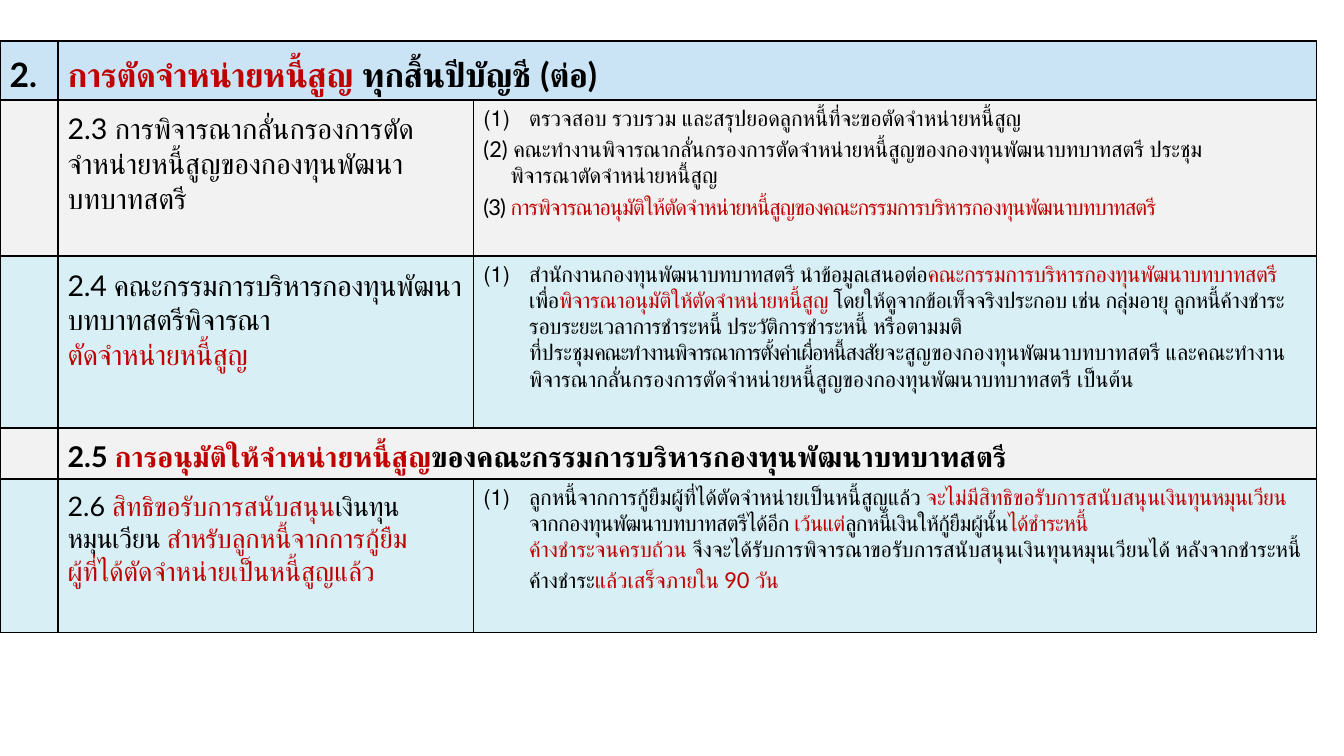
from lxml import etree
from pptx import Presentation
from pptx.dml.color import RGBColor
from pptx.oxml.ns import qn
from pptx.util import Pt

FONT = "Lato"
COLORS = {
    "black": "000000",
    "red": "C00000",
    "header": "CAE4F6",
    "grey": "F2F2F2",
    "blue": "D7EFF5",
}
COLUMN_WIDTHS = [34.5, 247.5, 501.5]
ROW_HEIGHTS = [35, 93, 102.3, 30.3, 91.6]
ROW_FILLS = ["header", "grey", "blue", "grey", "blue"]
TAB_STOPS = [14.4, 35.3, 77.8]
NUMBER_INDENT = 27.2
HANGING_INDENT = 16.2


def black(text, spacing=0):
    return text, "black", spacing


def red(text, spacing=0):
    return text, "red", spacing


def set_indent(paragraph, indent, numbered):
    properties = paragraph._p.get_or_add_pPr()
    properties.set("marL", str(Pt(indent)))
    properties.set("indent", str(-Pt(indent)))
    if numbered:
        etree.SubElement(properties, qn("a:buFont"), typeface="Arial")
        etree.SubElement(properties, qn("a:buAutoNum"), type="arabicParenBoth")
    else:
        etree.SubElement(properties, qn("a:buNone"))
    tabs = etree.SubElement(properties, qn("a:tabLst"))
    for stop in TAB_STOPS:
        etree.SubElement(tabs, qn("a:tab"), pos=str(Pt(stop)), algn="l")


def write_paragraph(paragraph, runs, size, bold=False, indent=0, numbered=False):
    paragraph.line_spacing = 1.2
    if indent:
        set_indent(paragraph, indent, numbered)
    paragraph.font.name = FONT
    paragraph.font.size = Pt(size)
    paragraph.font.bold = bold
    for text, color, spacing in runs:
        for position, line in enumerate(text.split("\n")):
            if position:
                paragraph.add_line_break()
            if not line:
                continue
            run = paragraph.add_run()
            run.text = line
            run.font.color.rgb = RGBColor.from_string(COLORS[color])
            if spacing:
                run._r.get_or_add_rPr().set("spc", str(round(spacing * 100)))


def write_cell(cell, runs, size, **options):
    write_paragraph(cell.text_frame.paragraphs[0], runs, size, **options)


def write_numbered(cell, runs):
    write_cell(cell, runs, 13, indent=NUMBER_INDENT, numbered=True)


def style_cell(cell, fill):
    cell.margin_left = cell.margin_right = Pt(5.8)
    cell.margin_top = cell.margin_bottom = Pt(2.9)
    properties = cell._tc.get_or_add_tcPr()
    for side in ("lnL", "lnR", "lnT", "lnB"):
        line = etree.SubElement(properties, qn(f"a:{side}"), w=str(Pt(1)))
        solid = etree.SubElement(line, qn("a:solidFill"))
        etree.SubElement(solid, qn("a:srgbClr"), val=COLORS["black"])
    cell.fill.solid()
    cell.fill.fore_color.rgb = RGBColor.from_string(COLORS[fill])


def add_grid(slide):
    frame = slide.shapes.add_table(
        len(ROW_HEIGHTS), len(COLUMN_WIDTHS), Pt(0), Pt(24.5),
        Pt(sum(COLUMN_WIDTHS)), Pt(sum(ROW_HEIGHTS)))
    table = frame.table
    table.first_row = False
    table.horz_banding = False
    for column, width in zip(table.columns, COLUMN_WIDTHS):
        column.width = Pt(width)
    for row, height, fill in zip(table.rows, ROW_HEIGHTS, ROW_FILLS):
        row.height = Pt(height)
        for cell in row.cells:
            style_cell(cell, fill)
    for row in (0, 3):
        table.cell(row, 1).merge(table.cell(row, 2))
    return table


def fill_headings(table):
    write_cell(table.cell(0, 0), [black("2.")], 20, bold=True)
    write_cell(table.cell(0, 1), [
        red("การตัดจำหน่ายหนี้สูญ ", -0.3),
        black("ทุกสิ้นปีบัญชี (ต่อ)", -0.3),
    ], 20, bold=True)
    write_cell(table.cell(3, 1), [
        black("2.5"),
        red(" การอนุมัติให้จำหน่ายหนี้สูญ"),
        black("ของคณะกรรมการบริหารกองทุนพัฒนาบทบาทสตรี"),
    ], 17, bold=True)


def fill_topics(table):
    write_cell(table.cell(1, 1), [
        black("2.3 การพิจารณากลั่นกรองการตัดจำหน่ายหนี้สูญของกองทุนพัฒนาบทบาทสตรี"),
    ], 17)
    write_cell(table.cell(2, 1), [
        black("2.4 คณะกรรมการบริหารกองทุนพัฒนาบทบาทสตรีพิจารณา\n", -0.2),
        red("ตัดจำหน่ายหนี้สูญ", -0.2),
    ], 17)
    write_cell(table.cell(4, 1), [
        black("2.6 "),
        red("สิทธิขอรับการสนับสนุน"),
        black("เงินทุน\nหมุนเวียน ", -0.3),
        red("สำหรับ", -0.3),
        red("ลูกหนี้จากการกู้ยืม\nผู้ที่ได้ตัดจำหน่ายเป็นหนี้สูญแล้ว"),
    ], 16)


def fill_details(table):
    screening = table.cell(1, 2)
    write_numbered(screening, [
        black("ตรวจสอบ รวบรวม และสรุปยอดลูกหนี้ที่จะขอตัดจำหน่ายหนี้สูญ"),
    ])
    write_paragraph(screening.text_frame.add_paragraph(), [
        black("(2) คณะทำงานพิจารณากลั่นกรองการตัดจำหน่ายหนี้สูญของกองทุนพัฒนาบทบาทสตรี ประชุม\n"
              "พิจารณาตัดจำหน่ายหนี้สูญ"),
    ], 13, indent=HANGING_INDENT)
    write_paragraph(screening.text_frame.add_paragraph(), [
        black("(3) ", -0.5),
        red("การพิจารณาอนุมัติให้ตัดจำหน่ายหนี้สูญของคณะกรรมการบริหารกองทุนพัฒนาบทบาทสตรี", -0.5),
    ], 13)
    write_numbered(table.cell(2, 2), [
        black("สำนักงานกองทุนพัฒนาบทบาทสตรี นำข้อมูลเสนอต่อ", -0.2),
        red("คณะกรรมการบริหารกองทุนพัฒนาบทบาทสตรี", -0.2),
        black("เพื่อ", -0.2),
        red("พิจารณาอนุมัติให้ตัดจำหน่ายหนี้สูญ ", -0.2),
        black("โดยให้ดูจากข้อเท็จจริงประกอบ เช่น กลุ่มอายุ ลูกหนี้ค้างชำระ "
              "รอบระยะเวลาการชำระหนี้ ประวัติการชำระหนี้", -0.2),
        black(" หรือตามมติ\nที่ประชุม"),
        black("คณะทำงานพิจารณาการตั้งค่าเผื่อหนี้สงสัย", -0.7),
        black("จะสูญของกองทุนพัฒนาบทบาทสตรี และคณะทำงานพิจารณากลั่นกรอง"
              "การตัดจำหน่ายหนี้สูญของกองทุนพัฒนาบทบาทสตรี เป็นต้น"),
    ])
    write_numbered(table.cell(4, 2), [
        black("ลูกหนี้จากการกู้ยืมผู้ที่ได้ตัดจำหน่ายเป็นหนี้สูญแล้ว "),
        red("จะไม่มีสิทธิขอรับการสนับสนุน"),
        red("เงินทุนหมุนเวียน ", -0.3),
        black("จากกองทุนพัฒนาบทบาทสตรีได้อีก ", -0.3),
        red("เว้นแต่", -0.3),
        black("ลูกหนี้เงินให้กู้ยืมผู้นั้น", -0.3),
        red("ได้ชำระหนี้\n", -0.3),
        red("ค้างชำระจนครบถ้วน"),
        black(" จึงจะได้รับการพิจารณาขอรับการสนับสนุนเงินทุนหมุนเวียนได้ "
              "หลังจากชำระหนี้ค้างชำระ"),
        red("แล้วเสร็จภายใน 90 วัน"),
    ])


def main():
    presentation = Presentation()
    presentation.slide_width = Pt(800)
    presentation.slide_height = Pt(450)
    slide = presentation.slides.add_slide(presentation.slide_layouts[6])
    table = add_grid(slide)
    fill_headings(table)
    fill_topics(table)
    fill_details(table)
    presentation.save("out.pptx")


if __name__ == "__main__":
    main()
